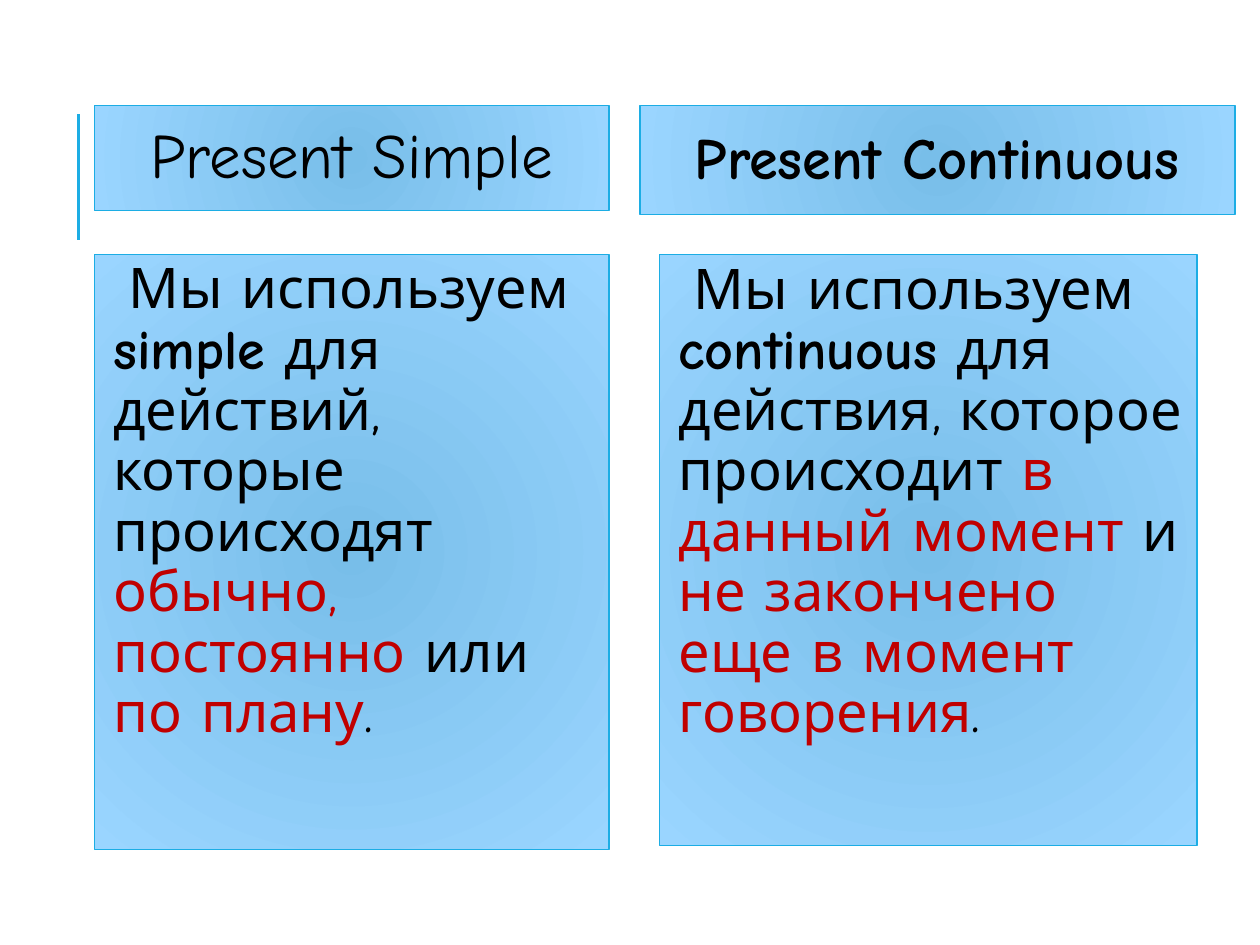
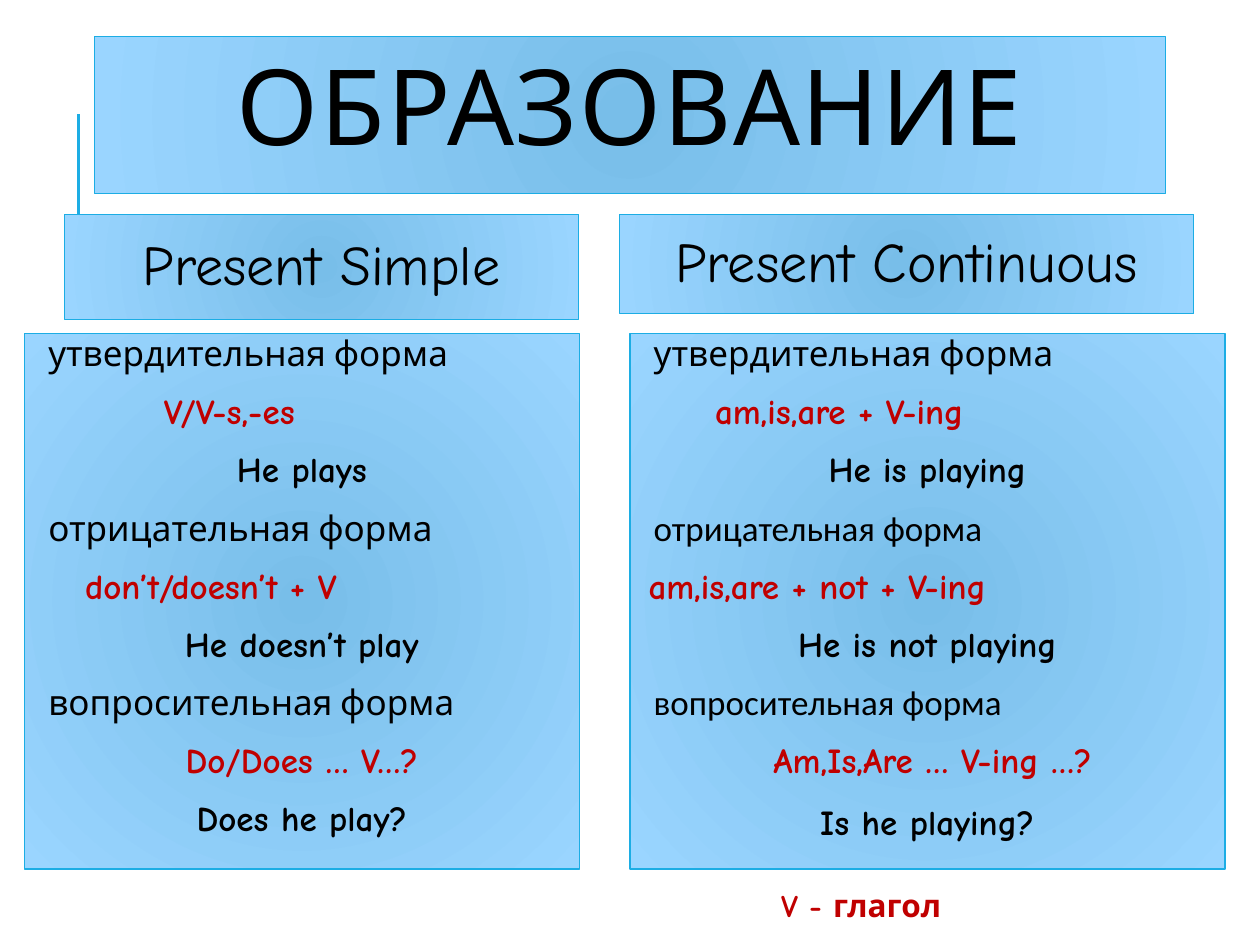
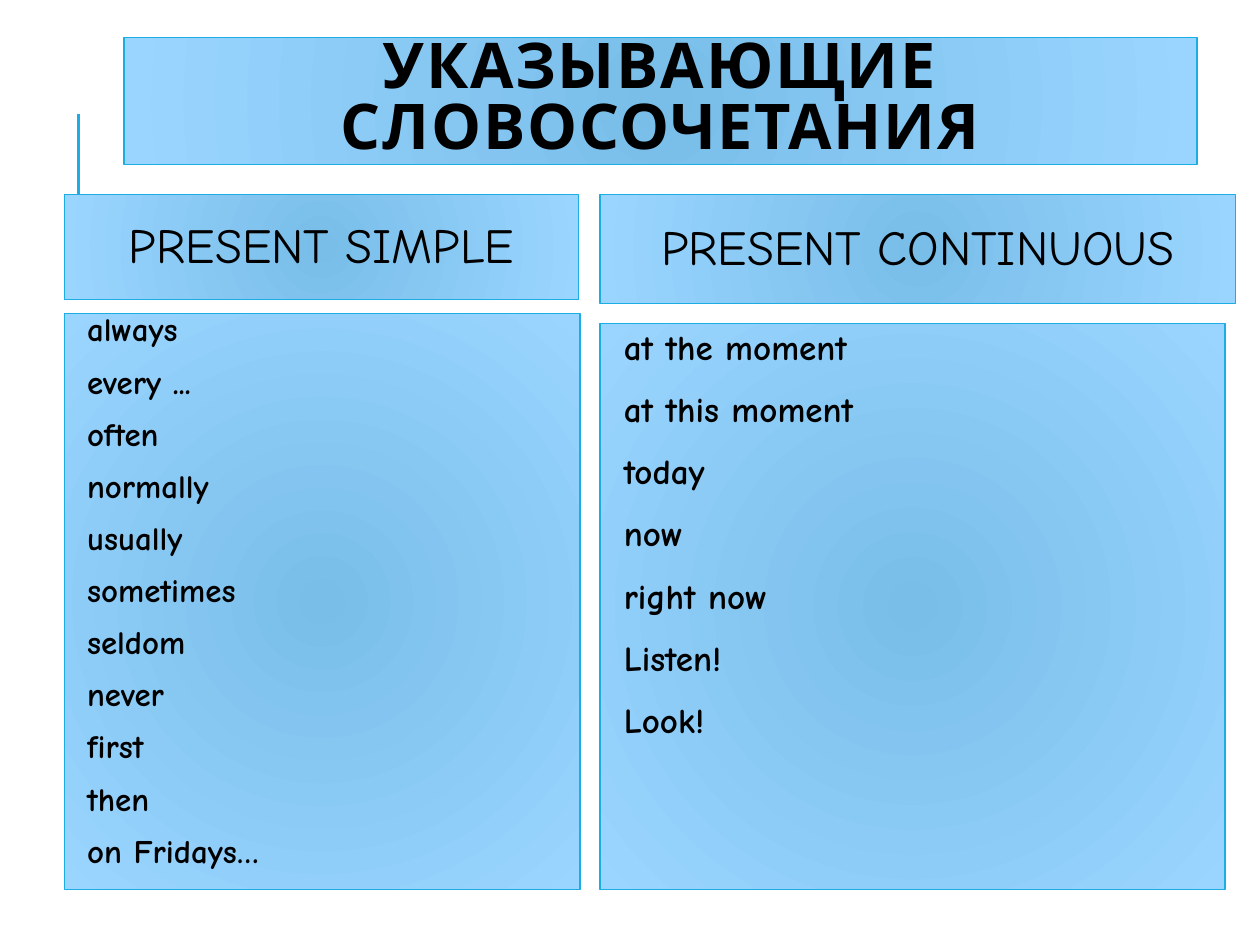
from lxml import etree
from pptx import Presentation
from pptx import util as u
from pptx.dml.color import RGBColor
from pptx.enum import shapes, text
from pptx.oxml import ns

Pt = u.Pt
BLUE, DEEP, PALE = "1CADE4", "78BEE9", "9AD5FF"
BLACK, RED = "000000", "C00000"
COMIC, CABIN, PLAIN = "Comic Neue", "Cabin", "Calibri"
CENTER = text.PP_ALIGN.CENTER


def color(code):
    return RGBColor.from_string(code)


def node(parent, tag, **attrs):
    return etree.SubElement(parent, ns.qn(tag), attrs)


def glow(shape):
    """Fill the shape with a round gradient that is darkest at its centre."""
    shape.fill.gradient()
    for stop, code in zip(shape.fill.gradient_stops, (DEEP, PALE)):
        stop.color.rgb = color(code)
    grad = shape._element.spPr.find(ns.qn("a:gradFill"))
    grad.remove(grad.find(ns.qn("a:lin")))
    ring = node(grad, "a:path", path="circle")
    node(ring, "a:fillToRect", l="50000", t="50000", r="50000", b="50000")


def panel(slide, box, side, anchor):
    """Draw a glowing box and return its text frame."""
    shape = slide.shapes.add_shape(shapes.MSO_SHAPE.RECTANGLE, *map(Pt, box))
    shape.shadow.inherit = False
    glow(shape)
    shape.line.color.rgb = color(BLUE)
    shape.line.width = Pt(0.75)
    frame = shape.text_frame
    frame.word_wrap = True
    frame.vertical_anchor = anchor
    frame.margin_left = frame.margin_right = Pt(side)
    frame.margin_top = frame.margin_bottom = Pt(3.6)
    return frame


def add_run(para, words, size, ink=BLACK, bold=False, face=COMIC):
    run = para.add_run()
    run.text = words
    run.font.size = Pt(size)
    run.font.name = face
    run.font.bold = bold
    run.font.color.rgb = color(ink)
    return run


def add_para(frame, space, align=text.PP_ALIGN.LEFT):
    first = frame.paragraphs[0]
    para = frame.add_paragraph() if first.runs else first
    para.line_spacing = space
    para.alignment = align
    return para


def add_item(frame, space, align=text.PP_ALIGN.LEFT, left=0, hang=False):
    """Add a body paragraph; a hanging one has a blank bullet."""
    para = add_para(frame, space, align)
    para.space_before, para.space_after = Pt(12), Pt(2)
    props = para._p.get_or_add_pPr()
    props.set("marL", str(Pt(7.2 if hang else left)))
    props.set("indent", str(Pt(-7.2 if hang else 0)))
    if hang:
        tint = node(props, "a:buClr")
        node(tint, "a:srgbClr", val=BLUE)
        node(props, "a:buChar", char=" ")
    return para


def title(slide, box, words, size, bold=False):
    frame = panel(slide, box, 7.2, text.MSO_ANCHOR.MIDDLE)
    run = add_run(add_para(frame, 0.8, CENTER), words, size, bold=bold)
    run._r.get_or_add_rPr().set("spc", "100")


def head(slide, box, words, size, bold=False):
    frame = panel(slide, box, 10.8, text.MSO_ANCHOR.MIDDLE)
    add_run(add_para(frame, 0.9, CENTER), words, size, bold=bold)


def body(slide, box):
    return panel(slide, box, 3.6, text.MSO_ANCHOR.TOP)


def usage(slide, box, parts):
    para = add_item(body(slide, box), 0.9, hang=True)
    for part in parts:
        add_run(para, part[0], 32, *part[1:])


def forms(slide, box, groups, last=0.8):
    """List each form's name, its red formula and an example."""
    frame = body(slide, box)
    for name, face, rule, align, left, sample in groups:
        add_run(add_item(frame, 0.8, hang=True), name, 20, face=face)
        add_run(add_item(frame, 0.8, align, left), rule, 20, RED, True)
        para = add_item(frame, 0.8, CENTER)
        add_run(para, sample, 20, bold=True)
    para.line_spacing = last


def signals(slide, box, words, size, space):
    frame = body(slide, box)
    for word in words:
        add_run(add_item(frame, space, hang=True), word, size, bold=True)


def legend(slide, box, words):
    frame = slide.shapes.add_textbox(*map(Pt, box)).text_frame
    frame.word_wrap = False
    add_run(frame.paragraphs[0], words, 18, RED, True)


def new_slide(deck):
    """Add a blank slide with the upright accent line."""
    slide = deck.slides.add_slide(deck.slide_layouts[6])
    line = slide.shapes.add_connector(
        shapes.MSO_CONNECTOR.STRAIGHT, Pt(44.8), Pt(137), Pt(44.8), Pt(65))
    line.line.color.rgb = color(BLUE)
    line.line.width = Pt(1.5)
    node(line._element.spPr, "a:effectLst")
    return slide


def use_slide(deck):
    slide = new_slide(deck)
    head(slide, (54, 60.4, 294, 60), "Present Simple", 36)
    usage(slide, (54, 145.4, 294, 340), [
        ("Мы используем ",), ("simple", BLACK, True),
        (" для действий, которые происходят ",),
        ("обычно, постоянно ", RED), ("или ",), ("по плану", RED), (".",)])
    head(slide, (365.8, 60.4, 340, 62.4), "Present Continuous", 33.3, True)
    usage(slide, (377, 145.4, 307, 337.7), [
        ("Мы используем ",), ("continuous", BLACK, True),
        (" для действия, которое происходит ",),
        ("в данный момент ", RED), ("и ",),
        ("не закончено еще в момент говорения", RED), (".",)])


def form_slide(deck):
    slide = new_slide(deck)
    left = text.PP_ALIGN.LEFT
    yes, no, ask = (kind + " форма" for kind in (
        "утвердительная", "отрицательная", "вопросительная"))
    title(slide, (54, 20.7, 612, 90), "ОБРАЗОВАНИЕ", 60)
    head(slide, (36.8, 122.5, 294, 60), "Present Simple", 32)
    forms(slide, (14, 190.6, 317, 306), [
        (yes, CABIN, "V/V-s,-es", left, 76, "He plays"),
        (no, CABIN, "don’t/doesn’t + V", left, 31, "He doesn’t play"),
        (ask, CABIN, "Do/Does … V…?", CENTER, 0, "Does he play?")])
    head(slide, (354.2, 122.5, 328, 56.7), "Present Continuous", 32)
    forms(slide, (360, 190.6, 340, 306), [
        (yes, CABIN, "am,is,are + V-ing", left, 45, "He is playing"),
        (no, PLAIN, "am,is,are + not + V-ing", left, 7, "He is not playing"),
        (ask, PLAIN, "Am,Is,Are … V-ing …?", CENTER, 6, "Is he playing?")],
        last=0.9)
    legend(slide, (439.2, 502.6, 113.8, 28.8), "V - глагол")


def word_slide(deck):
    slide = new_slide(deck)
    title(slide, (70.8, 21.5, 613.2, 72.5), "УКАЗЫВАЮЩИЕ СЛОВОСОЧЕТАНИЯ",
          36, True)
    head(slide, (36.8, 111.2, 294, 60), "PRESENT SIMPLE", 28)
    signals(slide, (36.8, 179.2, 294.7, 329), [
        "always", "every ...", "often", "normally", "usually", "sometimes",
        "seldom", "never", "first", "then", "on Fridays…"], 18.8, 0.7)
    head(slide, (342.9, 111.2, 363, 62.4), "PRESENT CONTINUOUS", 28)
    signals(slide, (342.9, 184.9, 357.2, 323.3), [
        "at the moment", "at this moment", "today", "now", "right now",
        "Listen!", "Look!"], 20, 0.9)


def main():
    deck = Presentation()
    deck.slide_width, deck.slide_height = Pt(720), Pt(540)
    for build in (use_slide, form_slide, word_slide):
        build(deck)
    deck.save("out.pptx")


if __name__ == "__main__":
    main()
